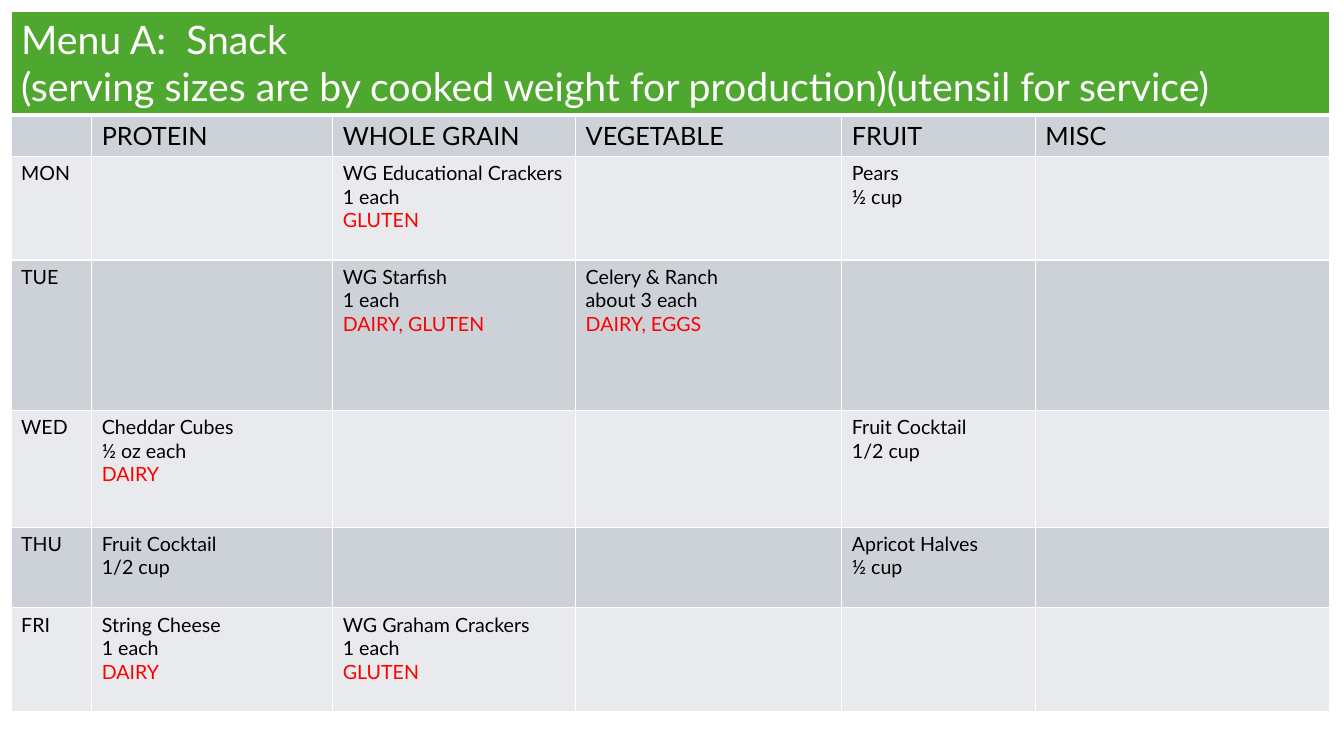
"""Build the weekly snack menu slide as one table."""
from dataclasses import dataclass, field

from lxml.etree import SubElement
from pptx import Presentation
from pptx.dml.color import RGBColor as RGB
from pptx.oxml.ns import qn
from pptx.table import Table, _Cell as Cell
from pptx.util import Emu, Pt

PX = 9144


@dataclass(frozen=True)
class Theme:
    font: str = "Lato"
    title_size: int = 28
    head_size: int = 18
    body_size: int = 14
    ink: str = "000000"
    white: str = "FFFFFF"
    alert: str = "FF0000"
    green: str = "4EA72E"
    dark_band: str = "CCD2D8"
    light_band: str = "E8EAED"


@dataclass(frozen=True)
class Snack:
    name: str
    portion: str
    allergens: str = ""


@dataclass(frozen=True)
class Day:
    label: str
    height: int
    snacks: dict[str, Snack] = field(default_factory=dict)


THEME = Theme()
TITLE = ("Menu A:  Snack",
         "(serving sizes are by cooked weight for production)(utensil for service)")
TITLE_HEIGHT, HEAD_HEIGHT = 103, 40
LABEL_WIDTH = 80
GROUPS = {"PROTEIN": 239, "WHOLE GRAIN": 241, "VEGETABLE": 264, "FRUIT": 192, "MISC": 292}
DAYS = [
    Day("MON", 103, {
        "WHOLE GRAIN": Snack("WG Educational Crackers", "1 each", "GLUTEN"),
        "FRUIT": Snack("Pears", "½ cup")}),
    Day("TUE", 149, {
        "WHOLE GRAIN": Snack("WG Starfish", "1 each", "DAIRY, GLUTEN"),
        "VEGETABLE": Snack("Celery & Ranch", "about 3 each", "DAIRY, EGGS")}),
    Day("WED", 116, {
        "PROTEIN": Snack("Cheddar Cubes", "½ oz each", "DAIRY"),
        "FRUIT": Snack("Fruit Cocktail", "1/2 cup")}),
    Day("THU", 80, {
        "PROTEIN": Snack("Fruit Cocktail", "1/2 cup"),
        "FRUIT": Snack("Apricot Halves", "½ cup")}),
    Day("FRI", 103, {
        "PROTEIN": Snack("String Cheese", "1 each", "DAIRY"),
        "WHOLE GRAIN": Snack("WG Graham Crackers", "1 each", "GLUTEN")}),
]


def px(n: int) -> Emu:
    """Turn a px length into EMU."""
    return Emu(n * PX)


def add_line(cell: Cell, text: str, *, size: int = THEME.body_size,
             color: str = THEME.ink) -> None:
    """Write one formatted paragraph, filling the empty first one if there is one."""
    tf = cell.text_frame
    p = tf.add_paragraph() if tf.text else tf.paragraphs[0]
    r = p.add_run()
    r.text = text
    r.font.name, r.font.size = THEME.font, Pt(size)
    r.font.color.rgb = RGB.from_string(color)


def style_cell(cell: Cell, fill: str, bottom: int = 1) -> None:
    """Give a cell white borders and a solid fill."""
    tc_pr = cell._tc.get_or_add_tcPr()
    for side, width in {"lnL": 1, "lnR": 1, "lnT": 1, "lnB": bottom}.items():
        ln = SubElement(tc_pr, qn(f"a:{side}"), w=str(Pt(width)))
        solid = SubElement(ln, qn("a:solidFill"))
        SubElement(solid, qn("a:srgbClr"), val=THEME.white)
    cell.fill.solid()
    cell.fill.fore_color.rgb = RGB.from_string(fill)


def add_title(table: Table) -> None:
    """Merge the top row and write the title in it."""
    cells = table.rows[0].cells
    for cell in cells:
        style_cell(cell, THEME.green, bottom=3)
    title = table.cell(0, 0)
    title.merge(table.cell(0, len(GROUPS)))
    for text in TITLE:
        add_line(title, text, size=THEME.title_size, color=THEME.white)


def add_header(table: Table) -> None:
    """Write the food group names."""
    for cell, text in zip(table.rows[1].cells, ["", *GROUPS]):
        style_cell(cell, THEME.dark_band)
        if text:
            add_line(cell, text, size=THEME.head_size)


def add_day(table: Table, row: int, day: Day) -> None:
    """Write one day's label and snacks."""
    fill = THEME.dark_band if row % 2 else THEME.light_band
    label, *cells = table.rows[row].cells
    style_cell(label, fill)
    add_line(label, day.label)
    for cell, group in zip(cells, GROUPS):
        style_cell(cell, fill)
        snack = day.snacks.get(group)
        if snack:
            add_line(cell, snack.name)
            add_line(cell, snack.portion)
            if snack.allergens:
                add_line(cell, snack.allergens, color=THEME.alert)


def main() -> None:
    """Build and save the slide."""
    prs = Presentation()
    prs.slide_width, prs.slide_height = px(1333), px(750)
    s = prs.slides.add_slide(prs.slide_layouts[6])
    widths = [LABEL_WIDTH, *GROUPS.values()]
    heights = [TITLE_HEIGHT, HEAD_HEIGHT, *(day.height for day in DAYS)]
    table = s.shapes.add_table(len(heights), len(widths), px(11), px(11),
                               px(sum(widths)), px(sum(heights))).table
    table.first_row = table.horz_banding = False
    for column, width in zip(table.columns, widths):
        column.width = px(width)
    for row, height in zip(table.rows, heights):
        row.height = px(height)
    add_title(table)
    add_header(table)
    for i, day in enumerate(DAYS, start=2):
        add_day(table, i, day)
    prs.save("out.pptx")


if __name__ == "__main__":
    main()
